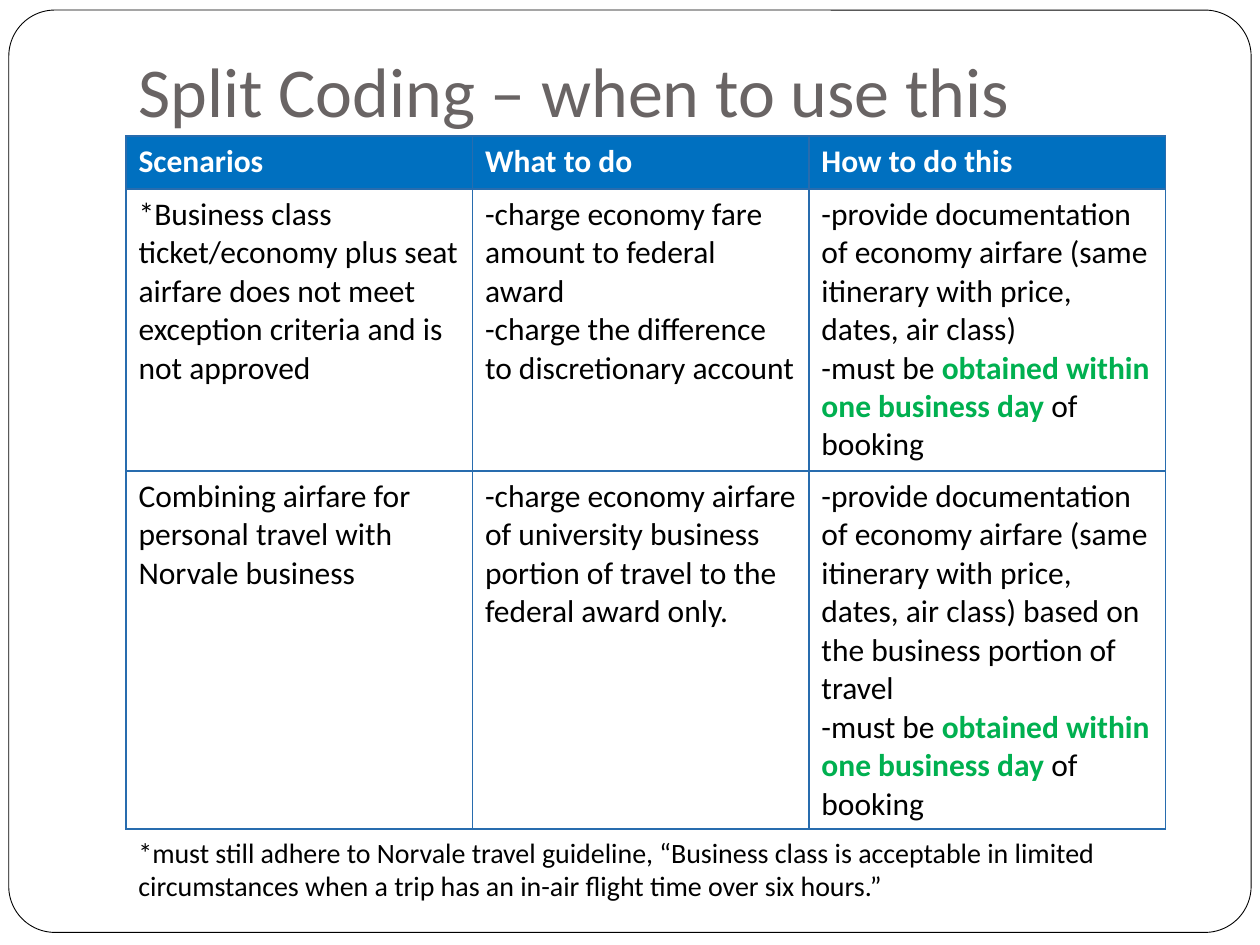
from lxml.etree import SubElement
from pptx import Presentation
from pptx.dml.color import RGBColor as RGB
from pptx.enum.shapes import MSO_SHAPE as Shape
from pptx.enum.text import MSO_ANCHOR as Anchor
from pptx.oxml import parse_xml
from pptx.oxml.ns import nsdecls, qn
from pptx.util import Inches as In, Pt

WHITE = RGB(0xFF, 0xFF, 0xFF)
BLACK = RGB(0, 0, 0)
GREY = RGB(0x69, 0x64, 0x64)
BLUE = RGB(0x00, 0x70, 0xC0)
GREEN = RGB(0x00, 0xB0, 0x50)
EDGE = RGB(0x28, 0x6C, 0xAE)
LEFT, WIDE = In(1), In(8.25)
COLS = [2.75, 2.67, 2.83]
ROWS = [0.42, 2.24, 2.84]


def write(frame, text, size, color, bold=False):
    """Fill a frame line by line; words between bars turn bold green."""
    frame.word_wrap = True
    for n, line in enumerate(text.split("\n")):
        para = frame.add_paragraph() if n else frame.paragraphs[0]
        for k, part in enumerate(line.split("|")):
            run = para.add_run()
            run.text = part
            look = {"name": "Calibri", "size": Pt(size), "bold": bold or k % 2 == 1}
            for key, val in look.items():
                setattr(run.font, key, val)
            run.font.color.rgb = GREEN if k % 2 else color


def border(cell):
    """Draw a thin line on all four sides of a cell."""
    props = cell._tc.get_or_add_tcPr()
    for n, side in enumerate(["lnL", "lnR", "lnT", "lnB"]):
        line = parse_xml(f'<a:{side} {nsdecls("a")} w="{Pt(1)}"/>')
        fill = SubElement(line, qn("a:solidFill"))
        SubElement(fill, qn("a:srgbClr")).set("val", str(EDGE))
        props.insert(n, line)


deck = Presentation()
deck.slide_width, deck.slide_height = In(10), In(7.5)
slide = deck.slides.add_slide(deck.slide_layouts[6])
shapes = slide.shapes

# Rounded frame around the page
frame = shapes.add_shape(Shape.ROUNDED_RECTANGLE, In(0.07), In(0.08), In(9.86), In(7.32))
frame.adjustments[0] = 0.05
frame.shadow.inherit = False
frame.fill.solid()
frame.fill.fore_color.rgb = WHITE
frame.line.color.rgb = BLACK
frame.line.width = Pt(0.5)

# Title
title = shapes.add_textbox(LEFT, In(0.17), In(8.5), In(0.97)).text_frame
title.vertical_anchor = Anchor.BOTTOM
title.margin_bottom = In(0.1)
write(title, "Split Coding – when to use this", 40, GREY)

# Table of scenarios
PROOF = "-provide documentation of economy airfare (same itinerary with price, dates, air class)"
LIMIT = "\n-must be |obtained within one business day |of booking"
CELLS = [
    ["Scenarios", "What to do", "How to do this"],
    ["*Business class ticket/economy plus seat airfare does not meet "
     "exception criteria and is not approved",
     "-charge economy fare amount to federal award\n"
     "-charge the difference to discretionary account",
     PROOF + LIMIT],
    ["Combining airfare for personal travel with Norvale business",
     "-charge economy airfare of university business portion of travel "
     "to the federal award only.",
     PROOF + " based on the business portion of travel" + LIMIT],
]
table = shapes.add_table(len(ROWS), len(COLS), LEFT, In(1.08), WIDE, In(sum(ROWS))).table
table.first_row = table.horz_banding = False
for col, width in zip(table.columns, COLS):
    col.width = In(width)
for r, (texts, high) in enumerate(zip(CELLS, ROWS)):
    table.rows[r].height = In(high)
    for c, text in enumerate(texts):
        cell = table.cell(r, c)
        head = r == 0
        write(cell.text_frame, text, 18, WHITE if head else BLACK, head)
        if head:
            cell.fill.solid()
            cell.fill.fore_color.rgb = BLUE
        else:
            cell.fill.background()
        border(cell)

# Footnote
note = shapes.add_textbox(LEFT, In(6.58), WIDE, In(0.94)).text_frame
write(note, "*must still adhere to Norvale travel guideline, “Business class is acceptable in "
      "limited circumstances when a trip has an in-air flight time over six hours.”", 16, BLACK)

deck.save("out.pptx")
